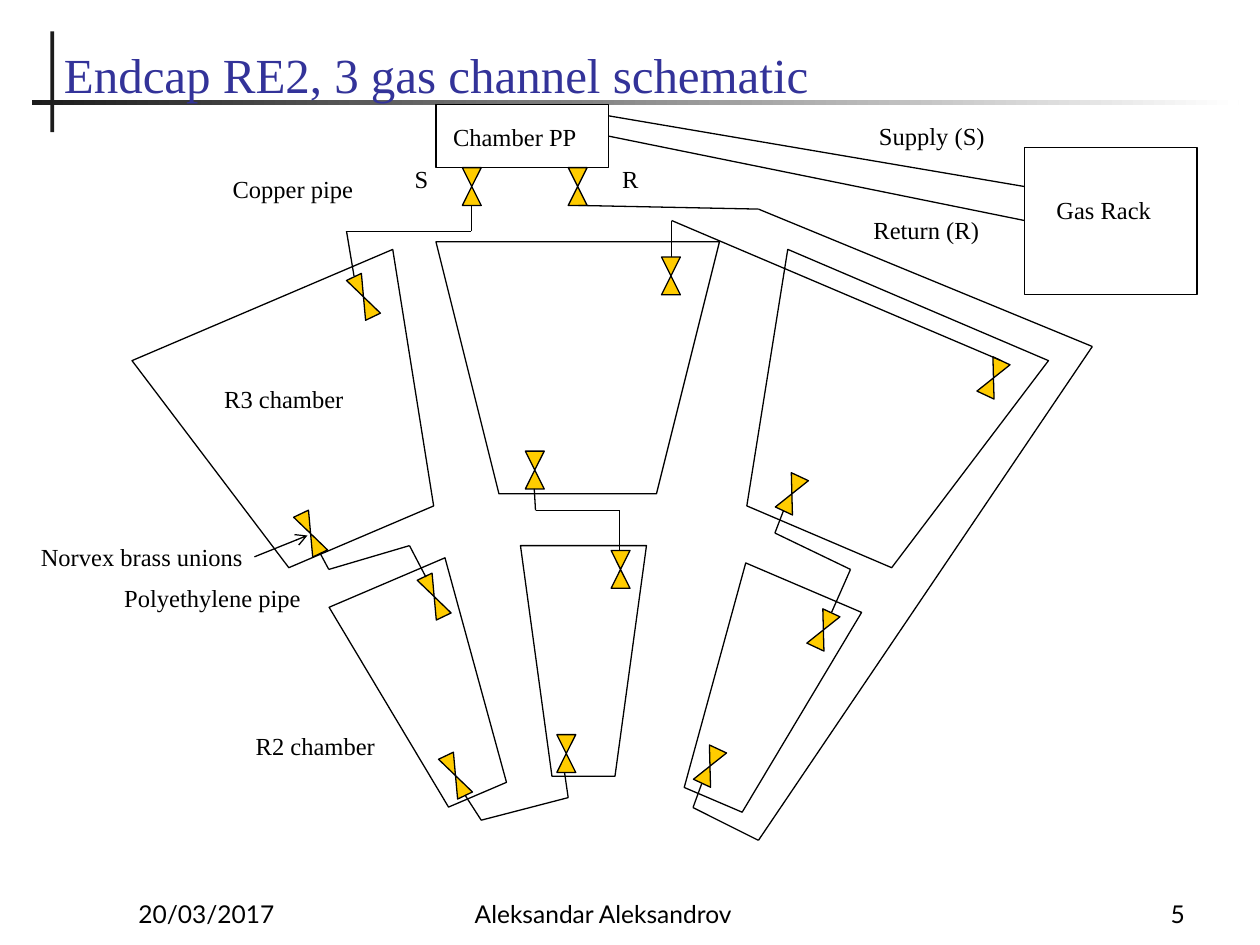
from dataclasses import dataclass
from itertools import pairwise

from lxml.etree import SubElement
from pptx import Presentation
from pptx.dml.color import RGBColor
from pptx.enum.shapes import MSO_CONNECTOR as Connector, MSO_SHAPE as Shape
from pptx.enum.text import MSO_ANCHOR as Anchor, PP_ALIGN as Align
from pptx.oxml.ns import qn
from pptx.util import Pt


def color(value):
    return RGBColor.from_string(value)


def write(shape, text, font="Times New Roman", size=14, fill="000000",
          align=Align.LEFT, anchor=Anchor.TOP, wrap=True):
    frame = shape.text_frame
    frame.word_wrap = wrap
    frame.vertical_anchor = anchor
    paragraph = frame.paragraphs[0]
    paragraph.text = text
    paragraph.alignment = align
    paragraph.font.name = font
    paragraph.font.size = Pt(size)
    paragraph.font.color.rgb = color(fill)


@dataclass
class Schematic:
    slide: object
    ink: str = "000000"
    paper: str = "FFFFFF"
    accent: str = "FFCC00"
    bar: str = "1C1C1C"
    title_color: str = "333399"
    footer_font: str = "Lato"
    line_width: float = 0.75

    def outline(self, kind, box, fill, rotation=0):
        shape = self.slide.shapes.add_shape(kind, *map(Pt, box))
        shape.shadow.inherit = False
        shape.fill.solid()
        shape.fill.fore_color.rgb = color(fill)
        shape.line.color.rgb = color(self.ink)
        shape.line.width = Pt(self.line_width)
        shape.rotation = rotation
        return shape

    def title_bar(self, *box, fade=False):
        shape = self.outline(Shape.RECTANGLE, box, self.bar)
        shape.line.fill.background()
        if fade:
            shape.fill.gradient()
            shape.fill.gradient_angle = 0
            for stop, position, shade in zip(shape.fill.gradient_stops, (0, 1), (self.bar, self.paper)):
                stop.position = position
                stop.color.rgb = color(shade)

    def text(self, box, text, **style):
        write(self.slide.shapes.add_textbox(*map(Pt, box)), text, **style)

    def title(self, text):
        self.text((29.5, 8.6, 664.6, 54), text, size=28, fill=self.title_color, anchor=Anchor.BOTTOM)

    def footer(self, left, width, text, align=Align.LEFT):
        self.text((left, 498.2, width, 36), text, font=self.footer_font, align=align, anchor=Anchor.BOTTOM)

    def label(self, left, top, width, text, align=Align.CENTER):
        self.text((left, top, width, 24.5), text, align=align, wrap=False)

    def chamber(self, left, top, width, height, rotation):
        self.outline(Shape.TRAPEZOID, (left, top, width, height), self.paper, rotation)

    def cabinet(self, *box):
        self.outline(Shape.RECTANGLE, box, self.paper)

    def union(self, left, top, width, height, rotation):
        self.outline(Shape.FLOWCHART_COLLATE, (left, top, width, height), self.accent, rotation)

    def pipe(self, *points, arrow=False):
        for start, end in pairwise(points):
            line = self.slide.shapes.add_connector(Connector.STRAIGHT, *map(Pt, start + end))
            line.line.color.rgb = color(self.ink)
            line.line.width = Pt(self.line_width)
            if arrow:
                SubElement(line.line._get_or_add_ln(), qn("a:tailEnd"), type="arrow")
            SubElement(line._element.spPr, qn("a:effectLst"))


CHAMBERS = [
    (156.9, (97.2, 168.5), (211, 327.6)),
    (180, (249.1, 138.2), (297.4, 311.8)),
    (203.1, (415.4, 168.5), (397.4, 330.5)),
]
UNIONS = [
    (9.4, 25.2, 334.4, [(203, 157), (172.8, 292.3), (243.4, 328.3), (255.6, 430.6)]),
    (10.8, 21.6, 0, [(378, 146.9), (300.2, 257.8), (349.2, 314.6), (318.2, 419.8),
                     (264.2, 95.8), (324.7, 95.8)]),
    (10.8, 21.6, 25, [(562.3, 205.2), (447.1, 271.4), (465.1, 349.2), (400.3, 427)]),
]
PIPES = [
    [(585.4, 106.6), (347.8, 66.2)],
    [(585.4, 126), (347.8, 77.8)],
    [(269.3, 117.4), (269.3, 132.1), (198, 132.1), (202.3, 157.7)],
    [(182.9, 316.1), (187.9, 325.4), (234, 311.8), (243.4, 329.8)],
    [(265.7, 454.3), (275, 468.7), (324.7, 455.8), (322.6, 441.4)],
    [(305.3, 279.4), (306, 291.6), (354.2, 291.6), (354.2, 314.6)],
    [(383.8, 146.9), (383.8, 126), (571.7, 205.9)],
    [(447.8, 291.6), (442.8, 304.6), (486, 325.4), (475.2, 349.9)],
    [(401, 447.8), (396, 461.5), (433.4, 480.2), (624.2, 198), (433.4, 119.5), (330.5, 117.4)],
]
LABELS = [
    (596.2, 108, 69.1, "Gas Rack"),
    (251.3, 66.2, 85.7, "Chamber PP"),
    (494.7, 65.5, 75.6, "Supply (S)"),
    (491.5, 119.5, 75.6, "Return (R)"),
    (229.7, 90, 22.3, "S"),
    (348.5, 90, 23.8, "R", Align.LEFT),
    (11, 306, 140, "Norvex brass unions"),
    (120.5, 216, 83.5, "R3 chamber"),
    (138.5, 414, 83.5, "R2 chamber"),
    (125.3, 95.8, 84.2, "Copper pipe"),
    (63.5, 329.8, 115.9, "Polyethylene pipe"),
]


def main():
    presentation = Presentation()
    presentation.slide_width = Pt(720)
    presentation.slide_height = Pt(540)
    schematic = Schematic(presentation.slides.add_slide(presentation.slide_layouts[6]))

    schematic.title_bar(28.8, 18, 2.2, 57.6)
    schematic.title_bar(18, 56.9, 689.8, 2.9, fade=True)
    schematic.title("Endcap RE2, 3 gas channel schematic")
    schematic.footer(72, 150, "20/03/2017")
    schematic.footer(264.2, 228, "Aleksandar Aleksandrov")
    schematic.footer(534.2, 150, "5", align=Align.RIGHT)

    for rotation, outer, inner in CHAMBERS:
        schematic.chamber(*outer, 162, 144, rotation)
        schematic.chamber(*inner, 72, 131.8, rotation)
    schematic.cabinet(249.1, 59.8, 98.6, 36)
    schematic.cabinet(585.4, 84.2, 98.6, 84.2)
    for width, height, rotation, corners in UNIONS:
        for corner in corners:
            schematic.union(*corner, width, height, rotation)
    for points in PIPES:
        schematic.pipe(*points)
    schematic.pipe((145.4, 318.2), (175.7, 306), arrow=True)
    for label in LABELS:
        schematic.label(*label)

    presentation.save("out.pptx")


if __name__ == "__main__":
    main()
